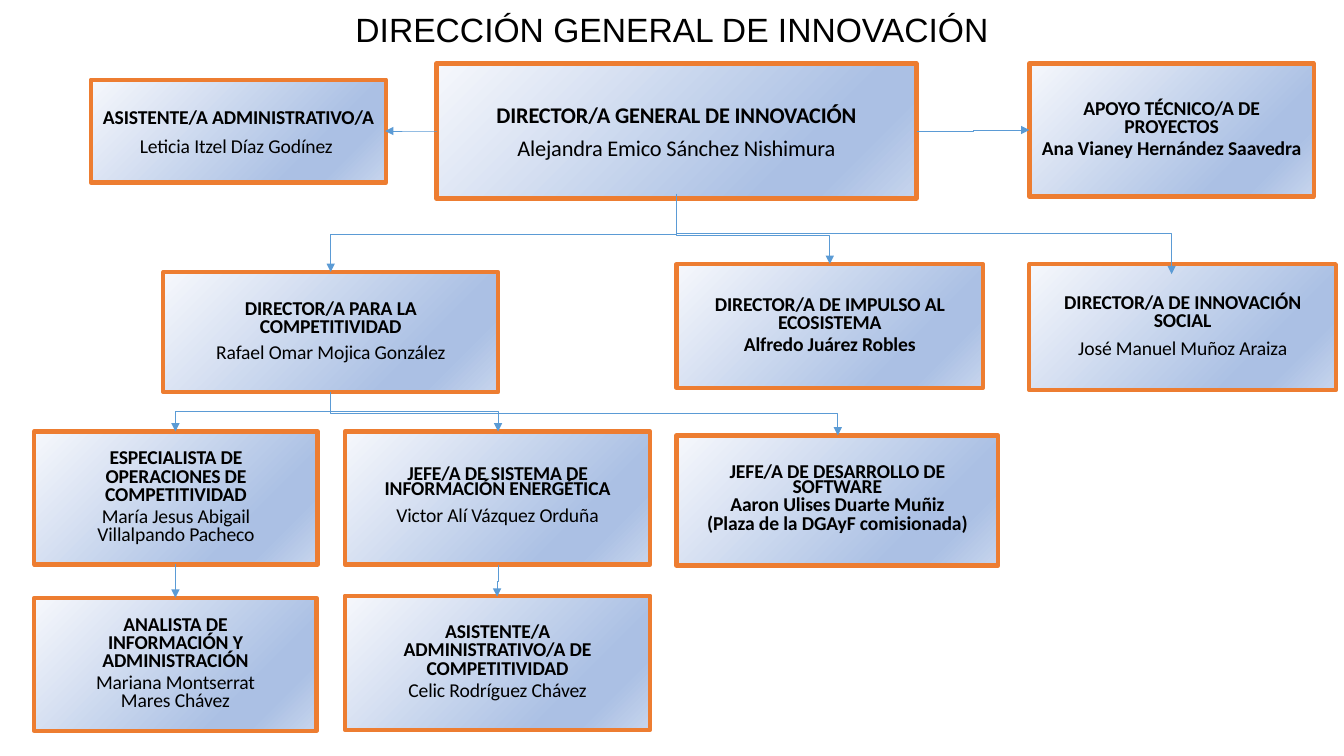
from dataclasses import dataclass

from lxml.etree import SubElement
from pptx import Presentation
from pptx.dml.color import RGBColor as RGB
from pptx.enum.shapes import MSO_CONNECTOR as Link, MSO_SHAPE as Form
from pptx.enum.text import MSO_ANCHOR as Anchor, MSO_AUTO_SIZE as Fit, PP_ALIGN as Align
from pptx.oxml.ns import qn
from pptx.util import Inches, Pt


@dataclass(frozen=True)
class Theme:
    """Colours, fonts and type sizes of the chart."""
    ink: str = "000000"
    edge: str = "ED7D31"
    wire: str = "5B9BD5"
    fade: tuple = ((0, "F6F8FC"), (74, "ABC0E4"), (83, "ABC0E4"), (100, "C7D5ED"))
    head: str = "Arial"
    font: str = "Calibri"
    title: int = 24
    lead: int = 16
    text: int = 14


@dataclass(frozen=True)
class Style:
    """Spacing of one paragraph: side indent, line height, space before."""
    side: float = 0.0
    line: object = None
    gap: float = 0.0


LOOK = Theme()
PLAIN = Style(0.01, Pt(13), 2.6)
INSET = Style(0.27, Pt(13), 2.6)
TIGHT = Style(0.01, Pt(10.8), 2.3)

BOXES = [
    ((4.33, 0.63, 4.76, 1.34), LOOK.lead, [
        ("DIRECTOR/A GENERAL DE INNOVACIÓN", True, Style(gap=5.2)),
        ("Alejandra Emico Sánchez Nishimura", False, Style(0.2, 1.25))]),
    ((0.9, 0.79, 2.93, 1.02), LOOK.text, [
        ("ASISTENTE/A ADMINISTRATIVO/A", True, Style(gap=4)),
        ("Leticia Itzel Díaz Godínez ", False, Style(0.3, 1.25))]),
    ((10.21, 0.63, 2.82, 1.32), LOOK.text, [
        ("APOYO TÉCNICO/A DE PROYECTOS", True, PLAIN),
        ("Ana Vianey Hernández Saavedra", True, PLAIN)]),
    ((1.62, 2.7, 3.32, 1.19), LOOK.text, [
        ("DIRECTOR/A PARA LA COMPETITIVIDAD", True, INSET),
        ("Rafael Omar Mojica González", False, Style(0.01, Pt(18), 0.8))]),
    ((6.71, 2.62, 3.04, 1.23), LOOK.text, [
        ("DIRECTOR/A DE IMPULSO AL ECOSISTEMA", True, PLAIN),
        ("Alfredo Juárez Robles", True, PLAIN)]),
    ((10.21, 2.62, 3.04, 1.25), LOOK.text, [
        ("DIRECTOR/A DE INNOVACIÓN SOCIAL", True, PLAIN),
        ("José Manuel Muñoz Araiza", False, Style(gap=3.4))]),
    ((0.34, 4.28, 2.81, 1.32), LOOK.text, [
        ("ESPECIALISTA DE OPERACIONES DE COMPETITIVIDAD", True, INSET),
        ("María Jesus Abigail Villalpando Pacheco", False, INSET)]),
    ((3.42, 4.28, 3.03, 1.32), LOOK.text, [
        ("JEFE/A DE SISTEMA DE INFORMACIÓN ENERGÉTICA", True, TIGHT),
        ("Victor Alí Vázquez Orduña", False, Style(gap=2.9))]),
    ((6.71, 4.32, 3.19, 1.29), LOOK.text, [
        ("JEFE/A DE DESARROLLO DE SOFTWARE", True, TIGHT),
        ("Aaron Ulises Duarte Muñiz", True, TIGHT),
        ("(Plaza de la DGAyF comisionada)", True, TIGHT)]),
    ((0.34, 5.93, 2.8, 1.32), LOOK.text, [
        ("ANALISTA DE INFORMACIÓN Y ADMINISTRACIÓN", True, INSET),
        ("Mariana Montserrat Mares Chávez", False, INSET)]),
    ((3.42, 5.91, 3.03, 1.33), LOOK.text, [
        ("ASISTENTE/A ADMINISTRATIVO/A DE COMPETITIVIDAD", True, INSET),
        ("Celic Rodríguez Chávez", False, INSET)]),
]

SIDES = [(4.33, 1.3, 3.82, 1.3), (9.09, 1.3, 10.21, 1.29)]
DROPS = [
    (6.71, 1.96, 3.28, 2.7, 0.5),
    (6.71, 1.96, 8.23, 2.62, 0.566),
    (6.71, 1.92, 11.62, 2.72, 0.5),
    (3.28, 3.89, 1.74, 4.28, 0.5),
    (3.28, 3.89, 4.94, 4.28, 0.5),
    (3.28, 3.89, 8.31, 4.32, 0.5),
    (1.74, 5.6, 1.74, 5.93, 0.5),
    (4.94, 5.61, 4.93, 5.92, 0.5),
]


def add_run(para, text, font, size, bold=False):
    """Add one run of text in the given type."""
    run = para.add_run()
    run.text = text
    run.font.name, run.font.size, run.font.bold = font, Pt(size), bold
    run.font.color.rgb = RGB.from_string(LOOK.ink)
    return run


def add_title(slide, text):
    """Fill the title placeholder across the top of the slide."""
    title = slide.shapes.title
    title.left, title.top = Inches(0), Inches(0.04)
    title.width, title.height = Inches(13.33), Inches(0.5)
    frame = title.text_frame
    frame.auto_size, frame.vertical_anchor = Fit.NONE, Anchor.TOP
    para = frame.paragraphs[0]
    para.alignment = Align.CENTER
    add_run(para, text, LOOK.head, LOOK.title)


def add_fade(box):
    """Fill a box with the diagonal blue gradient."""
    box.fill.gradient()
    box.fill.gradient_angle = 315
    stops = box._element.spPr.find(".//" + qn("a:gsLst"))
    stops.clear()
    for at, tint in LOOK.fade:
        stop = SubElement(stops, qn("a:gs"), pos=str(at * 1000))
        SubElement(stop, qn("a:srgbClr"), val=tint)


def add_para(para, text, bold, style, size):
    """Write one centred paragraph with its spacing."""
    para.alignment = Align.CENTER
    para.space_before = Pt(style.gap)
    para.line_spacing = style.line
    props = para._p.get_or_add_pPr()
    for key in ("marL", "marR"):
        props.set(key, str(Inches(style.side)))
    run = add_run(para, text, LOOK.font, size, bold)
    run._r.get_or_add_rPr().set("spc", "-10")


def add_box(slide, place, size, lines):
    """Add one post with its title and the name of its holder."""
    box = slide.shapes.add_shape(Form.RECTANGLE, *map(Inches, place))
    box.shadow.inherit = False
    add_fade(box)
    box.line.color.rgb = RGB.from_string(LOOK.edge)
    box.line.width = Pt(3)
    frame = box.text_frame
    frame.word_wrap, frame.vertical_anchor = True, Anchor.MIDDLE
    for i, (text, bold, style) in enumerate(lines):
        para = frame.add_paragraph() if i else frame.paragraphs[0]
        add_para(para, text, bold, style, size)


def add_link(slide, *ends):
    """Add an elbow arrow between two points."""
    link = slide.shapes.add_connector(Link.ELBOW, *map(Inches, ends))
    link.line.color.rgb = RGB.from_string(LOOK.wire)
    link.line.width = Pt(0.5)
    SubElement(link.line._get_or_add_ln(), qn("a:tailEnd"), type="triangle")
    SubElement(link._element.spPr, qn("a:effectLst"))
    return link


def add_drop(slide, x1, y1, x2, y2, bend):
    """Add an elbow arrow that leaves downwards and turns at the bend."""
    wide, high = y2 - y1, abs(x2 - x1)
    left, top = (x1 + x2 - wide) / 2, (y1 + y2 - high) / 2
    start, end = left, left + wide
    turn = 90
    if x2 > x1:
        start, end, turn = end, start, 270
    link = add_link(slide, start, top, end, top + high)
    props = link._element.spPr
    props.find(qn("a:xfrm")).set("rot", str(turn * 60000))
    guides = props.find(qn("a:prstGeom")).find(qn("a:avLst"))
    SubElement(guides, qn("a:gd"), name="adj1", fmla=f"val {round(bend * 100000)}")


def main():
    """Build the organisation chart and save it."""
    deck = Presentation()
    deck.slide_width, deck.slide_height = Inches(13.33), Inches(7.5)
    slide = deck.slides.add_slide(deck.slide_layouts[5])
    add_title(slide, "DIRECCIÓN GENERAL DE INNOVACIÓN")
    for box in BOXES:
        add_box(slide, *box)
    for side in SIDES:
        add_link(slide, *side)
    for drop in DROPS:
        add_drop(slide, *drop)
    deck.save("out.pptx")


if __name__ == "__main__":
    main()
